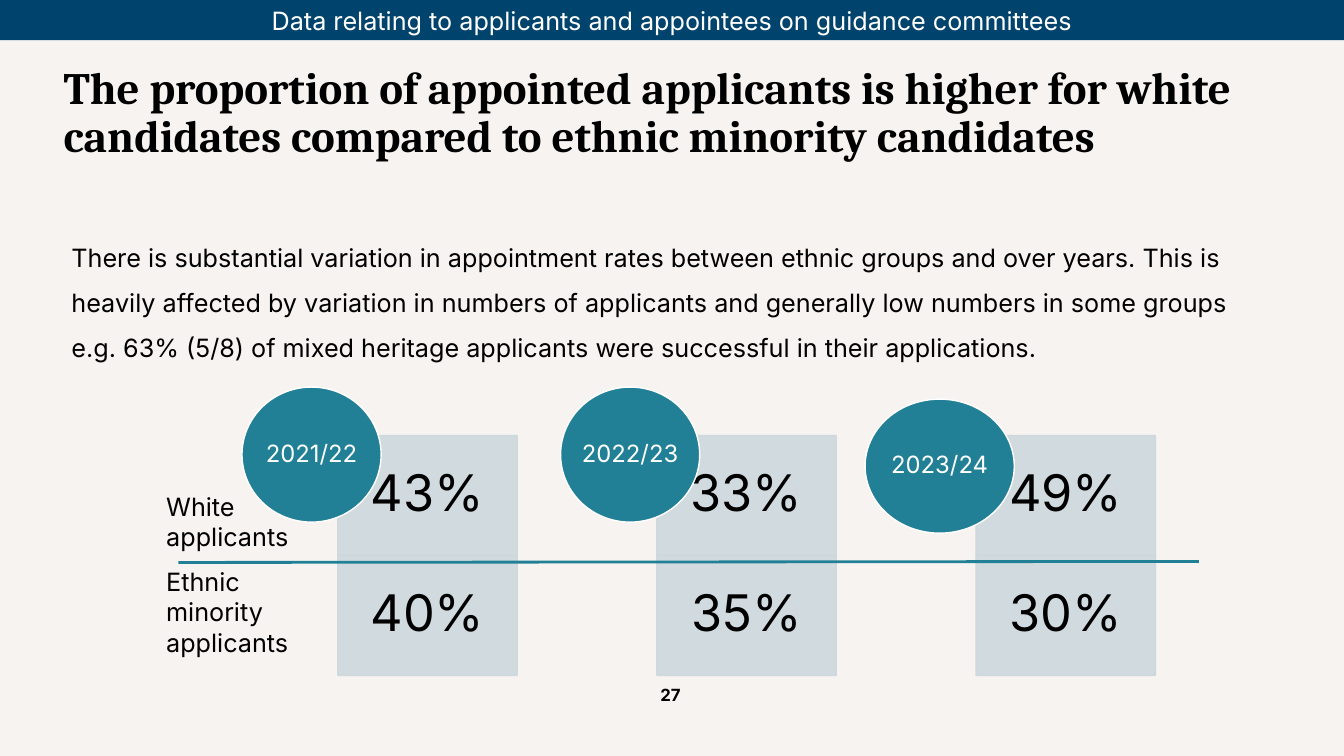
from lxml.etree import SubElement
from pptx import Presentation
from pptx.dml.color import RGBColor
from pptx.enum.shapes import MSO_CONNECTOR, MSO_SHAPE
from pptx.enum.text import MSO_ANCHOR, MSO_AUTO_SIZE, PP_ALIGN
from pptx.oxml.ns import qn
from pptx.util import Inches, Pt

COLOURS = {
    "background": "F7F3F1", "banner": "00436C", "teal": "228096",
    "panel": "CDD8DD", "black": "000000", "white": "FFFFFF",
}


def write(box, words, size, colour="black", font="Inter", bold=False,
          align=PP_ALIGN.LEFT, anchor=MSO_ANCHOR.TOP, spacing=1.0):
    frame = box.text_frame
    frame.word_wrap = True
    frame.auto_size = MSO_AUTO_SIZE.NONE
    frame.vertical_anchor = anchor
    para = frame.paragraphs[0]
    para.text = words
    para.alignment = align
    para.line_spacing = spacing
    para.font.name = font
    para.font.size = Pt(size)
    para.font.bold = bold
    para.font.color.rgb = RGBColor.from_string(COLOURS[colour])
    return para


def add_filled(kind, left, top, width, height, fill, outline=None, opacity=100):
    shape = page.shapes.add_shape(
        kind, Inches(left), Inches(top), Inches(width), Inches(height))
    shape.shadow.inherit = False
    shape.fill.solid()
    shape.fill.fore_color.rgb = RGBColor.from_string(COLOURS[fill])
    if outline:
        shape.line.color.rgb = RGBColor.from_string(COLOURS[outline])
        shape.line.width = Pt(1)
    else:
        shape.line.fill.background()
    if opacity < 100:
        for colour in shape._element.spPr.iter(qn("a:srgbClr")):
            SubElement(colour, qn("a:alpha"), val=str(opacity * 1000))
    return shape


deck = Presentation()
deck.slide_width, deck.slide_height = Inches(13.33), Inches(7.5)
page = deck.slides.add_slide(deck.slide_layouts[5])
page.background.fill.solid()
page.background.fill.fore_color.rgb = RGBColor.from_string(COLOURS["background"])

# Title
title = page.shapes.title
title.left, title.top = Inches(0.53), Inches(0.6)
title.width, title.height = Inches(12.11), Inches(1.27)
write(title, "The proportion of appointed applicants is higher for white "
      "candidates compared to ethnic minority candidates",
      32, font="Cambria", bold=True, spacing=0.9)

# Introduction
intro = page.shapes.add_textbox(Inches(0.61), Inches(2.2), Inches(12.11), Inches(1.6))
write(intro, "There is substantial variation in appointment rates between ethnic "
      "groups and over years. This is heavily affected by variation in numbers of "
      "applicants and generally low numbers in some groups e.g. 63% (5/8) of mixed "
      "heritage applicants were successful in their applications.",
      18, spacing=1.5).space_before = Pt(0)

# One column per year: rates on panels, year in a circle
years = [
    ("2021/22", ("43%", "40%"), (2.4, 3.84, 1.38, 1.34)),
    ("2022/23", ("33%", "35%"), (5.56, 3.84, 1.38, 1.34)),
    ("2023/24", ("49%", "30%"), (8.58, 3.96, 1.48, 1.33)),
]
for column, (year, rates, circle_place) in enumerate(years):
    for row, rate in enumerate(rates):
        panel = add_filled(MSO_SHAPE.RECTANGLE, 3.35 + 3.165 * column,
                           4.32 + 1.19 * row, 1.78, 1.19, "panel", "panel", 90)
        frame = panel.text_frame
        frame.margin_left = frame.margin_right = Inches(0.28)
        frame.margin_top = frame.margin_bottom = Inches(0.28)
        # The rate is centred right of the part the circle overlaps
        frame.margin_left = Inches(0.28)
        frame.margin_right = Inches(0.28)
        write(panel, rate, 36, align=PP_ALIGN.CENTER,
              anchor=MSO_ANCHOR.MIDDLE, spacing=0.9)
    circle = add_filled(MSO_SHAPE.OVAL, *circle_place, "teal", "white")
    frame = circle.text_frame
    frame.margin_left = frame.margin_right = 0
    frame.margin_top = frame.margin_bottom = 0
    write(circle, year, 17, "white", align=PP_ALIGN.CENTER,
          anchor=MSO_ANCHOR.MIDDLE, spacing=0.9)

# Divider between the two groups
divider = page.shapes.add_connector(
    MSO_CONNECTOR.STRAIGHT, Inches(1.77), Inches(5.58), Inches(11.89), Inches(5.57))
divider.line.color.rgb = RGBColor.from_string(COLOURS["teal"])
divider.line.width = Pt(2)
SubElement(divider._element.spPr, qn("a:effectLst"))

# Row labels
for words, top, width, height in [
    ("White applicants", 4.82, 1.68, 0.71),
    ("Ethnic minority applicants", 5.57, 1.86, 1.01),
]:
    label = page.shapes.add_textbox(
        Inches(1.55), Inches(top), Inches(width), Inches(height))
    write(label, words, 18)

# Banner and page number
banner = add_filled(MSO_SHAPE.RECTANGLE, 0, 0, 13.33, 0.4, "banner")
write(banner, "Data relating to applicants and appointees on guidance committees",
      18, "white", align=PP_ALIGN.CENTER, anchor=MSO_ANCHOR.MIDDLE)
number = page.shapes.add_textbox(Inches(5.15), Inches(6.74), Inches(3), Inches(0.4))
write(number, "27", 12, bold=True, align=PP_ALIGN.CENTER)

deck.save("out.pptx")
